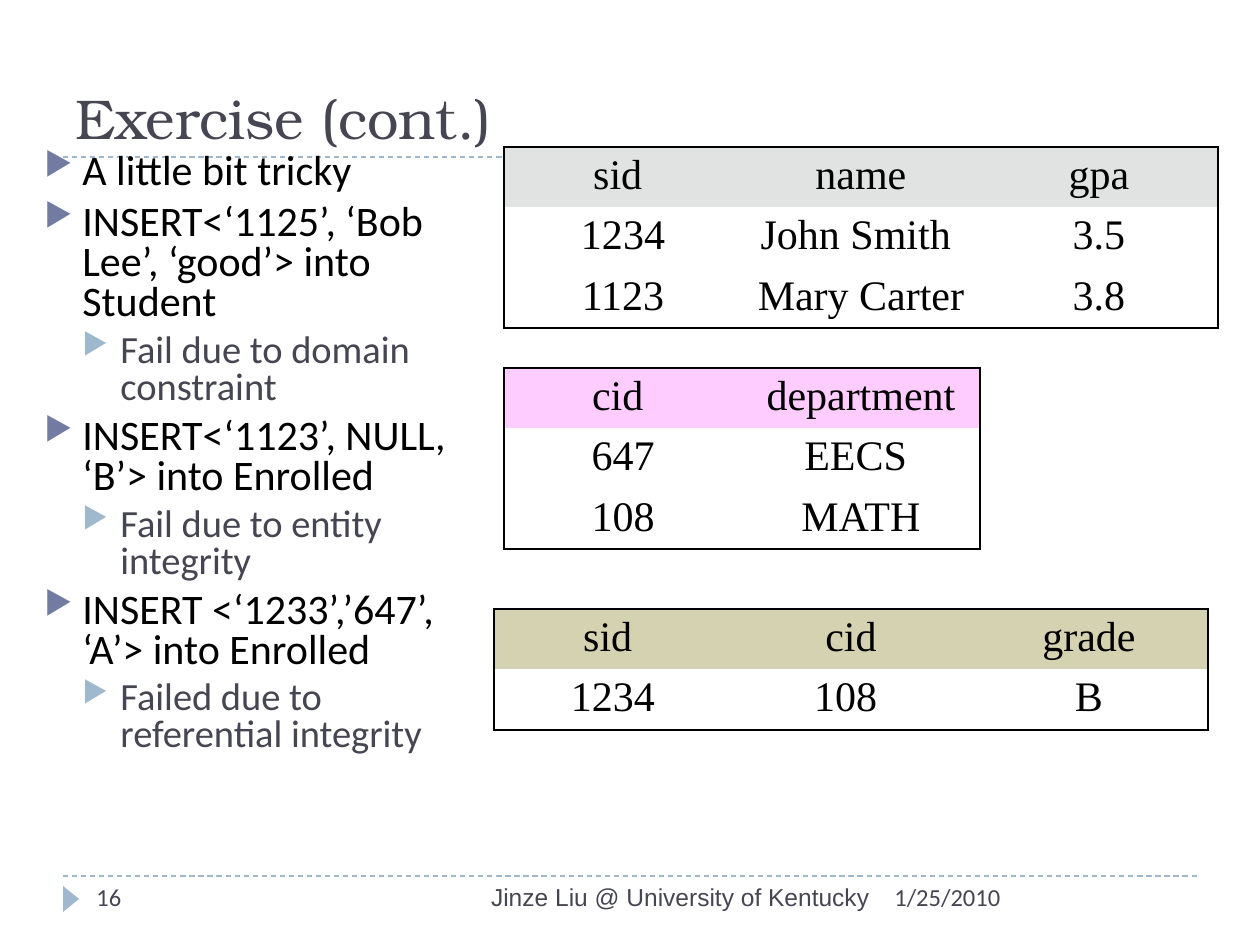
from dataclasses import dataclass

from pptx import Presentation
from pptx.dml.color import RGBColor
from pptx.enum.dml import MSO_LINE_DASH_STYLE as Dash
from pptx.enum.shapes import MSO_CONNECTOR as Connector, MSO_SHAPE as Preset
from pptx.enum.text import MSO_ANCHOR as Anchor, MSO_AUTO_SIZE as AutoSize, PP_ALIGN as Align
from pptx.oxml.ns import qn
from pptx.util import Emu, Pt
from lxml.etree import SubElement


@dataclass(frozen=True)
class Theme:
    ink: str = "000000"
    slate: str = "464653"
    indigo: str = "727CA3"
    sky: str = "9FB8CD"
    gray: str = "E1E3E3"
    pink: str = "FFCCFF"
    khaki: str = "D4D2B0"
    title_font: str = "TeX Gyre Bonum"
    body_font: str = "Calibri"
    footer_font: str = "Arial"
    table_font: str = "Times New Roman"
    title_size: int = 32
    main_size: int = 24
    sub_size: int = 22
    footer_size: int = 14


THEME = Theme()


@dataclass(frozen=True)
class Bullet:
    text: str
    level: int = 0


@dataclass(frozen=True)
class Footer:
    text: str
    left: int
    width: int
    font: str = THEME.body_font
    align: Align = Align.LEFT


@dataclass(frozen=True)
class Relation:
    left: int
    top: int
    header_fill: str
    rows: tuple[tuple[str, ...], ...]


BULLETS = (
    Bullet("A little bit tricky"),
    Bullet("INSERT<‘1125’, ‘Bob Lee’, ‘good’> into Student"),
    Bullet("Fail due to domain constraint", 1),
    Bullet("INSERT<‘1123’, NULL, ‘B’> into Enrolled"),
    Bullet("Fail due to entity integrity", 1),
    Bullet("INSERT <‘1233’,’647’, ‘A’> into Enrolled"),
    Bullet("Failed due to referential integrity", 1),
)
FOOTERS = (
    Footer("1/25/2010", 882, 315),
    Footer("Jinze Liu @ University of Kentucky", 399, 483, THEME.footer_font, Align.RIGHT),
    Footer("16", 84, 273),
)
RELATIONS = (
    Relation(504, 147, THEME.gray, (
        ("sid ", "name", "gpa"), ("1234", "John Smith ", "3.5"), ("1123", "Mary Carter ", "3.8"))),
    Relation(504, 368, THEME.pink, (("cid ", "department"), ("647", "EECS "), ("108", "MATH"))),
    Relation(494, 609, THEME.khaki, (("sid ", "cid", "grade"), ("1234", "108 ", "B"))),
)
COLUMN_WIDTH, ROW_HEIGHT, CELL_MARGIN = 238, 59, 5
INDENT = 38


def px(count: int) -> Emu:
    return Emu(round(count * 914400 / 126))


def add_span(para, text: str, font: str, size: int, color: str) -> None:
    span = para.add_run()
    span.text = text
    span.font.name = font
    span.font.size = Pt(size)
    span.font.color.rgb = RGBColor.from_string(color)


def add_box(page, left: int, top: int, width: int, height: int):
    box = page.shapes.add_textbox(px(left), px(top), px(width), px(height))
    box.text_frame.word_wrap = True
    return box.text_frame


def add_rule(page, y: int) -> None:
    rule = page.shapes.add_connector(Connector.STRAIGHT, px(63), px(y), px(1197), px(y))
    rule.line.color.rgb = RGBColor.from_string(THEME.sky)
    rule.line.width = Pt(0.75)
    rule.line.dash_style = Dash.DASH
    SubElement(rule._element.spPr, qn("a:effectLst"))


def add_marker(page) -> None:
    marker = page.shapes.add_shape(Preset.ISOSCELES_TRIANGLE, px(58), px(891), px(26), px(16))
    marker.rotation = 90
    marker.shadow.inherit = False
    marker.fill.solid()
    marker.fill.fore_color.rgb = RGBColor.from_string(THEME.sky)
    marker.line.fill.background()


def set_title(page, text: str) -> None:
    title = page.shapes.title
    title.left, title.top, title.width, title.height = px(63), px(21), px(1134), px(136)
    title.text_frame.vertical_anchor = Anchor.BOTTOM
    title.text_frame.auto_size = AutoSize.NONE
    para = title.text_frame.paragraphs[0]
    para.alignment = Align.LEFT
    add_span(para, text, THEME.title_font, THEME.title_size, THEME.slate)


def add_footer(page, footer: Footer) -> None:
    para = add_box(page, footer.left, 876, footer.width, 50).paragraphs[0]
    para.alignment = footer.align
    add_span(para, footer.text, footer.font, THEME.footer_size, THEME.slate)


def add_bullets(page, bullets: tuple[Bullet, ...]) -> None:
    frame = add_box(page, 32, 147, 462, 725)
    for index, bullet in enumerate(bullets):
        para = frame.add_paragraph() if index else frame.paragraphs[0]
        para.level = bullet.level
        para.line_spacing = 0.8
        para.space_before = Pt(5 if bullet.level else 6)
        props = para._p.get_or_add_pPr()
        props.set("marL", str(px(INDENT * (bullet.level + 1))))
        props.set("indent", str(-px(INDENT)))
        color = SubElement(props, qn("a:buClr"))
        SubElement(color, qn("a:srgbClr"), val=THEME.sky if bullet.level else THEME.indigo)
        SubElement(props, qn("a:buSzPct"), val="76000")
        SubElement(props, qn("a:buChar"), char="▶")
        size, ink = (THEME.sub_size, THEME.slate) if bullet.level else (THEME.main_size, THEME.ink)
        add_span(para, bullet.text, THEME.body_font, size, ink)


def set_border(cell, side: str, visible: bool) -> None:
    line = SubElement(cell._tc.get_or_add_tcPr(), qn(f"a:ln{side}"), w=str(Pt(1)))
    if visible:
        SubElement(SubElement(line, qn("a:solidFill")), qn("a:srgbClr"), val=THEME.ink)
    else:
        SubElement(line, qn("a:noFill"))


def add_relation(page, relation: Relation) -> None:
    row_count, column_count = len(relation.rows), len(relation.rows[0])
    table = page.shapes.add_table(
        row_count, column_count, px(relation.left), px(relation.top),
        px(COLUMN_WIDTH * column_count), px(ROW_HEIGHT * row_count)).table
    table.first_row = table.horz_banding = False
    for row_index, values in enumerate(relation.rows):
        table.rows[row_index].height = px(ROW_HEIGHT)
        for column_index, value in enumerate(values):
            cell = table.cell(row_index, column_index)
            cell.margin_top = cell.margin_bottom = px(CELL_MARGIN)
            set_border(cell, "L", column_index == 0)
            set_border(cell, "R", column_index == column_count - 1)
            set_border(cell, "T", row_index == 0)
            set_border(cell, "B", row_index == row_count - 1)
            if row_index == 0:
                cell.fill.solid()
                cell.fill.fore_color.rgb = RGBColor.from_string(relation.header_fill)
            else:
                cell.fill.background()
            para = cell.text_frame.paragraphs[0]
            para.alignment = Align.CENTER
            add_span(para, value, THEME.table_font, THEME.main_size, THEME.ink)


def main() -> None:
    deck = Presentation()
    deck.slide_width, deck.slide_height = px(1260), px(945)
    page = deck.slides.add_slide(deck.slide_layouts[5])
    for y in (876, 157):
        add_rule(page, y)
    add_marker(page)
    set_title(page, "Exercise (cont.)")
    for footer in FOOTERS:
        add_footer(page, footer)
    add_bullets(page, BULLETS)
    for relation in RELATIONS:
        add_relation(page, relation)
    deck.save("out.pptx")


if __name__ == "__main__":
    main()
